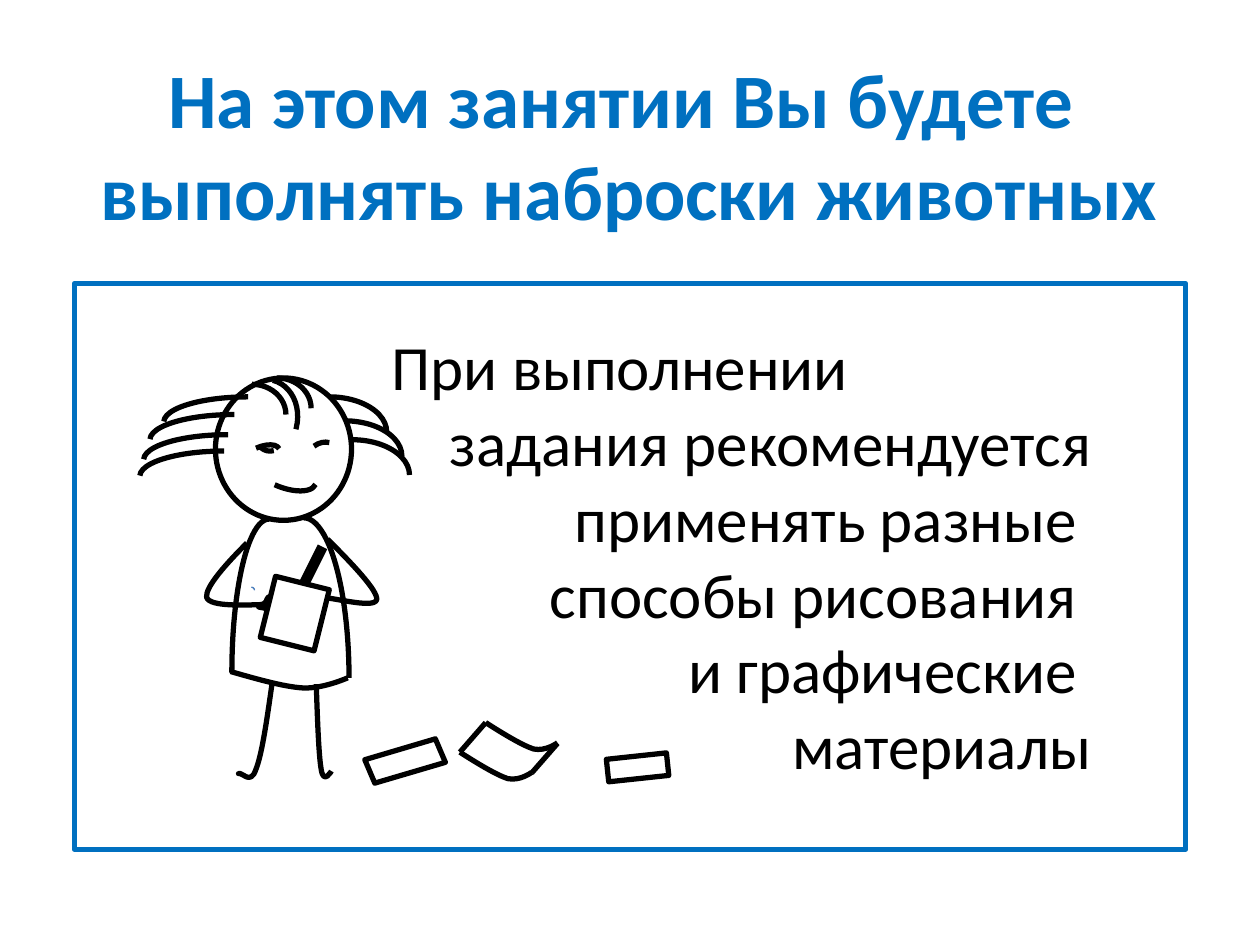
import lxml.etree
import pptx
import pptx.dml.color
import pptx.enum.shapes
import pptx.enum.text
import pptx.oxml.ns
import pptx.util

SHAPE = pptx.enum.shapes.MSO_SHAPE
ALIGN = pptx.enum.text.PP_ALIGN
COLORS = {"accent": "0070C0", "ink": "000000", "paper": "FFFFFF", "detail": "4B7EBC"}
FONT = "Calibri"
COLUMNS, ROWS = 100, 75  # square cells of a tenth of an inch
# Arc angles as adjustment values: start and end in 1/100000 of 1/60000 degree
NEARLY_QUARTER, SHORT_ARC, WIDE_ARC = (162, 215.75), (162, 200.68), (162, 1.63)


def cells(count):
    return pptx.util.Inches(count * 10 / COLUMNS)


def color(name):
    return pptx.dml.color.RGBColor.from_string(COLORS[name])


def style(shape, fill=None, line="ink", width=3):
    shape.shadow.inherit = False
    if fill:
        shape.fill.solid()
        shape.fill.fore_color.rgb = color(fill)
    else:
        shape.fill.background()
    shape.line.color.rgb = color(line)
    shape.line.width = pptx.util.Pt(width)


def add_preset(shapes, kind, box, rotation=0, flip="", adjustments=(), **look):
    shape = shapes.add_shape(kind, *map(cells, box))
    for index, value in enumerate(adjustments):
        shape.adjustments[index] = value
    shape.rotation = rotation
    for axis in flip:
        shape.element.spPr.xfrm.set("flip" + axis, "1")
    style(shape, **look)


def add_arc(shapes, box, **options):
    add_preset(shapes, SHAPE.ARC, box, **options)


def add_curve(shapes, start, *segments):
    """Draw cubic segments, each given as two control points and an end."""
    qualified = pptx.oxml.ns.qn
    builder = shapes.build_freeform(*map(cells, start))
    builder.add_line_segments(
        [tuple(map(cells, point)) for segment in segments for point in segment], close=False)
    shape = builder.convert_to_shape()
    # Turn every three straight steps into one cubic curve
    steps = list(shape.element.iter(qualified("a:lnTo")))
    for index in range(0, len(steps), 3):
        curve = lxml.etree.Element(qualified("a:cubicBezTo"))
        steps[index].addprevious(curve)
        for step in steps[index:index + 3]:
            curve.append(step[0])
            step.getparent().remove(step)
    style(shape)


def add_line(shapes, start, end, width=3):
    line = shapes.add_connector(
        pptx.enum.shapes.MSO_CONNECTOR.STRAIGHT, *map(cells, (*start, *end)))
    line.line.color.rgb = color("ink")
    line.line.width = pptx.util.Pt(width)
    lxml.etree.SubElement(line.element.spPr, pptx.oxml.ns.qn("a:effectLst"))


def add_text_box(shapes, box, wrap):
    frame = shapes.add_textbox(*map(cells, box)).text_frame
    frame.word_wrap = wrap
    return frame


def add_run(paragraph, text, size, color_name, bold=False):
    run = paragraph.add_run()
    run.text = text
    run.font.name, run.font.size, run.font.bold = FONT, pptx.util.Pt(size), bold
    run.font.color.rgb = color(color_name)


def add_recommendation(shapes):
    frame = add_text_box(shapes, (1, 20.6, 86.6, 33), True)
    frame.margin_top, frame.margin_bottom = cells(5.4), 0
    first, rest = frame.paragraphs[0], frame.add_paragraph()
    first.alignment, rest.alignment = ALIGN.LEFT, ALIGN.RIGHT
    first.line_spacing = rest.line_spacing = pptx.util.Pt(43.3)
    first._p.get_or_add_pPr().set("marL", str(cells(29.1)))
    add_run(first, "При выполнении", 36, "ink")
    lines = ("задания рекомендуется", "применять разные ", "способы рисования ",
             "и графические ", "материалы")
    for index, text in enumerate(lines):
        if index:
            rest.add_line_break()
        add_run(rest, text, 36, "ink")


def add_title(shapes):
    frame = add_text_box(shapes, (6.7, 3.6, 86.6, 15.8), False)
    for index, text in enumerate(("На этом занятии Вы будете ", "выполнять наброски животных")):
        paragraph = frame.add_paragraph() if index else frame.paragraphs[0]
        paragraph.alignment = ALIGN.CENTER
        add_run(paragraph, text, 44, "accent", bold=True)


def add_girl(shapes):
    # Head and mouth
    add_arc(shapes, (19.7, 46.6, 0.5, 0.5), line="detail", width=0.75)
    add_preset(shapes, SHAPE.OVAL, (17.1, 30, 10.8, 11.3), fill="paper")
    add_arc(shapes, (24.2, 35.2, 2.7, 2.1), rotation=323.5, adjustments=SHORT_ARC)
    # Sides of the dress
    add_arc(shapes, (18.4, 41.2, 5.9, 24.4), flip="H", adjustments=NEARLY_QUARTER)
    # Ponytails
    for left, top in ((21.6, 31.5), (22.8, 33.4), (23.4, 34.9)):
        add_arc(shapes, (left, top, 9.1, 5.6))
    for left, top in ((13, 31.5), (11.9, 32.9), (11.4, 34.5), (11.1, 35.8)):
        add_arc(shapes, (left, top, 13.4, 4), flip="H", adjustments=NEARLY_QUARTER)
    # Left arm and hand
    add_curve(shapes, (19.6, 43.1),
              ((17.9, 44.8), (16.3, 46.6), (16.4, 47.4)),
              ((16.6, 48.2), (19.7, 48), (20.5, 48)),
              ((21.3, 48), (21.1, 47.5), (21.3, 47.4)),
              ((21.5, 47.3), (21.6, 47.3), (21.5, 47.4)),
              ((21.5, 47.6), (21, 48), (21.2, 48.2)),
              ((21.3, 48.4), (22.3, 48.6), (22.2, 48.6)),
              ((22.1, 48.6), (20.9, 48.2), (20.6, 48.2)),
              ((20.4, 48.1), (20.5, 48.1), (20.6, 48.1)))
    # Fringe
    add_arc(shapes, (18.2, 30.1, 5.4, 6.4), rotation=13.9, adjustments=WIDE_ARC)
    for left, top in ((19.3, 30), (17.3, 30.5)):
        add_arc(shapes, (left, top, 5.4, 4.8))
    # Right side of the dress and legs
    add_arc(shapes, (20.5, 41.1, 7.2, 25.4))
    add_curve(shapes, (21.6, 54.2),
              ((21.2, 57), (20.8, 59.9), (20.3, 61.1)),
              ((19.9, 62.3), (19.2, 61.3), (19, 61.4)),
              ((18.8, 61.4), (19.1, 61.4), (19.1, 61.4)))
    add_curve(shapes, (25.1, 54.3),
              ((25.2, 57.2), (25.3, 60), (25.5, 61.1)),
              ((25.7, 62.3), (26.3, 61.2), (26.3, 61.2)))
    # Pencil
    add_line(shapes, (23.5, 47.6), (25.6, 43.4), width=6)
    add_preset(shapes, SHAPE.ISOSCELES_TRIANGLE, (23, 47.4, 0.6, 0.9),
               rotation=205.5, fill="ink", width=2)
    # Eyes
    add_arc(shapes, (21, 34.3, 2.7, 5.9), rotation=114.1)
    add_arc(shapes, (19, 35.5, 3.3, 1.6), rotation=155.6, flip="HV")
    add_arc(shapes, (20.4, 33.8, 2.1, 2), rotation=163.9, adjustments=SHORT_ARC)
    # Right arm, sketch pad and hem
    add_curve(shapes, (26, 42.8),
              ((28, 44.8), (30, 46.9), (29.9, 47.6)),
              ((29.7, 48.4), (26.1, 47.3), (25.1, 47.4)),
              ((24.2, 47.4), (24.3, 48), (24.3, 48)))
    add_preset(shapes, SHAPE.RECTANGLE, (21.2, 46.2, 4.4, 5), rotation=14, fill="paper")
    add_curve(shapes, (18.3, 53.3),
              ((20.4, 53.9), (22.5, 54.5), (24, 54.6)),
              ((25.6, 54.7), (27.6, 53.8), (27.6, 53.8)))


def add_curled_sheet(shapes):
    shift_x, shift_y = 2.05, -2.35
    for x, y in ((36.5, 59.7), (36.5 + shift_x, 59.7 + shift_y)):
        add_curve(shapes, (x, y),
                  ((x + 1.4, y + 0.9), (x + 2.9, y + 1.8), (x + 3.8, y + 2.1)),
                  ((x + 4.8, y + 2.3), (x + 5.7, y + 1.6), (x + 5.7, y + 1.6)))
    for x, y in ((36.5, 59.7), (42.2, 61.35)):
        add_line(shapes, (x, y), (x + shift_x, y + shift_y))


def main():
    presentation = pptx.Presentation()
    presentation.slide_width, presentation.slide_height = cells(COLUMNS), cells(ROWS)
    shapes = presentation.slides.add_slide(presentation.slide_layouts[6]).shapes
    add_recommendation(shapes)
    add_girl(shapes.add_group_shape().shapes)
    # Frame around the drawing and the text
    add_preset(shapes, SHAPE.RECTANGLE, (5.9, 22.5, 88.2, 44.9), line="accent")
    # Sheets on the floor
    add_curled_sheet(shapes.add_group_shape().shapes)
    add_preset(shapes, SHAPE.RECTANGLE, (49.7, 58.5, 1.8, 4.8), rotation=263.9)
    add_preset(shapes, SHAPE.PARALLELOGRAM, (30.8, 57.5, 2.7, 5.8), rotation=66.9)
    add_title(shapes)
    presentation.save("out.pptx")


if __name__ == "__main__":
    main()
